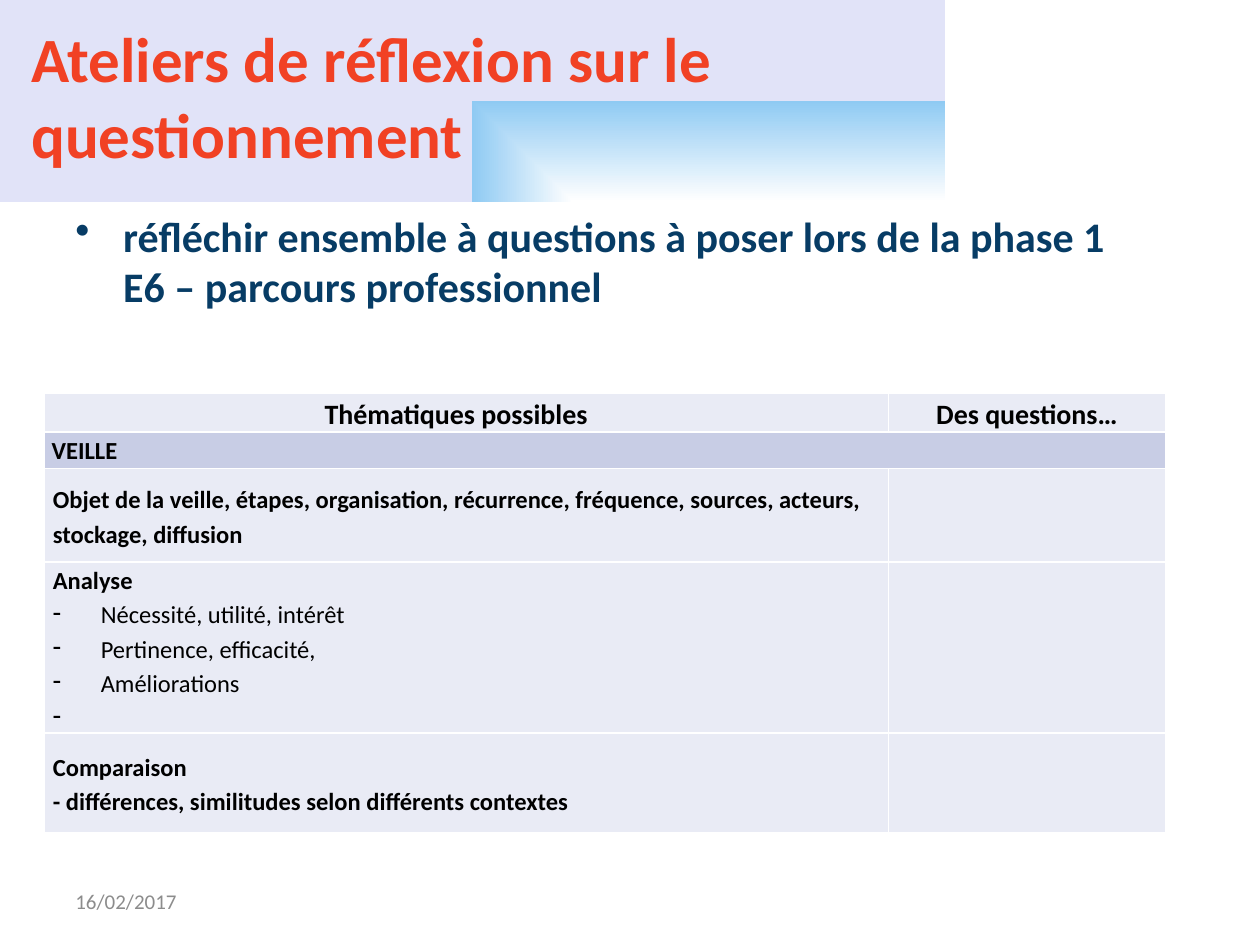
import pptx
import pptx.dml.color
import pptx.enum.shapes
import pptx.enum.text
import pptx.oxml
import pptx.oxml.ns
import pptx.util
from dataclasses import dataclass

Inches = pptx.util.Inches
Pt = pptx.util.Pt
Align = pptx.enum.text.PP_ALIGN
Anchor = pptx.enum.text.MSO_ANCHOR
NS = pptx.oxml.ns.nsdecls("a")


@dataclass(frozen=True)
class Theme:
    face: str = "Calibri"
    title: str = "F14124"
    lead: str = "073C65"
    date: str = "8C8C8C"
    ink: str = "000000"
    line: str = "FFFFFF"
    cell: str = "E9EBF5"
    band: str = "C8CDE5"
    # Banner gradient: position in percent, colour
    stops: tuple = ((0, "FFFFFF"), (100, "8FCAF3"), (100, "C1C7F2"), (100, "E1E3F8"))
    big: int = 36
    mid: int = 24
    head: int = 16
    body: int = 14
    small: int = 12


def rgb(code):
    return pptx.dml.color.RGBColor.from_string(code)


class Deck:
    def __init__(self, theme, wide, high):
        self.theme = theme
        self.file = pptx.Presentation()
        self.file.slide_width = Inches(wide)
        self.file.slide_height = Inches(high)
        self.slide = self.file.slides.add_slide(self.file.slide_layouts[6])

    def banner(self, *box):
        """Rectangle with a gradient that starts at its lower right corner."""
        shape = self.slide.shapes.add_shape(
            pptx.enum.shapes.MSO_SHAPE.RECTANGLE, *map(Inches, box))
        shape.shadow.inherit = False
        shape.line.fill.background()
        stops = "".join(
            f'<a:gs pos="{pos * 1000}"><a:srgbClr val="{code}"/></a:gs>'
            for pos, code in self.theme.stops)
        fill = pptx.oxml.parse_xml(
            f'<a:gradFill {NS} rotWithShape="1"><a:gsLst>{stops}</a:gsLst>'
            '<a:path path="rect"><a:fillToRect l="100000" t="100000"/></a:path>'
            '</a:gradFill>')
        shape._element.spPr.find(pptx.oxml.ns.qn("a:prstGeom")).addnext(fill)

    def style(self, para, text, size, color, bold=True, bullet=None):
        para.text = text
        if bullet:
            props = para._p.get_or_add_pPr()
            props.set("marL", str(Inches(0.38)))
            props.set("indent", str(-Inches(0.38)))
            props.append(pptx.oxml.parse_xml(f'<a:buChar {NS} char="{bullet}"/>'))
        font = para.font
        font.name, font.size, font.bold = self.theme.face, Pt(size), bold
        font.color.rgb = rgb(color)

    def text(self, box, text, size, color, anchor=Anchor.MIDDLE, **looks):
        frame = self.slide.shapes.add_textbox(*map(Inches, box)).text_frame
        frame.word_wrap = True
        frame.vertical_anchor = anchor
        self.style(frame.paragraphs[0], text, size, color, **looks)

    def table(self, left, top, cols, rows):
        frame = self.slide.shapes.add_table(
            len(rows), len(cols), Inches(left), Inches(top),
            Inches(sum(cols)), Inches(sum(rows)))
        grid = frame.table
        for col, wide in zip(grid.columns, cols):
            col.width = Inches(wide)
        for row, high in zip(grid.rows, rows):
            row.height = Inches(high)
        for cell in grid.iter_cells():
            self.paint(cell, self.theme.cell)
        return grid

    def paint(self, cell, color):
        cell.fill.solid()
        cell.fill.fore_color.rgb = rgb(color)
        props = cell._tc.get_or_add_tcPr()
        for spot, side in enumerate("LRTB"):
            props.insert(spot, pptx.oxml.parse_xml(
                f'<a:ln{side} {NS} w="{Pt(1)}"><a:solidFill>'
                f'<a:srgbClr val="{self.theme.line}"/></a:solidFill></a:ln{side}>'))

    def fill(self, cell, lines, size, pad=0.07, right=None,
             align=Align.LEFT, anchor=Anchor.MIDDLE):
        """Each line is (text, bold, bullet)."""
        cell.margin_left = Inches(pad)
        cell.margin_right = Inches(right or pad)
        cell.margin_top = cell.margin_bottom = 0
        cell.vertical_anchor = anchor
        frame = cell.text_frame
        for num, (text, bold, bullet) in enumerate(lines):
            para = frame.add_paragraph() if num else frame.paragraphs[0]
            self.style(para, text, size, self.theme.ink, bold, bullet)
            para.alignment = align
            para.line_spacing = 1.15


def main():
    theme = Theme()
    deck = Deck(theme, 10, 7.5)

    # Banner, title, lead and date
    deck.banner(0, 0, 7.5, 1.6)
    deck.text((0.5, 1.62, 9, 1.2),
              "réfléchir ensemble à questions à poser lors de la phase 1\v"
              "E6 – parcours professionnel",
              theme.mid, theme.lead, Anchor.TOP, bullet="•")
    deck.text((0.15, 0.13, 7.02, 1.25), "Ateliers de réflexion sur le questionnement",
              theme.big, theme.title)
    deck.text((0.5, 6.95, 2.33, 0.4), "16/02/2017", theme.small, theme.date, bold=False)

    # Table of themes
    grid = deck.table(0.35, 3.12, (6.7, 2.2), (0.31, 0.29, 0.74, 1.36, 0.79))
    heads = (("Thématiques possibles", 0.22), ("Des questions…", 0.06))
    for col, (text, right) in enumerate(heads):
        deck.fill(grid.cell(0, col), [(text, True, None)], theme.head,
                  0.06, right, Align.CENTER, Anchor.TOP)

    # Section row across both columns
    band = grid.cell(1, 0)
    band.merge(grid.cell(1, 1))
    band.fill.fore_color.rgb = rgb(theme.band)
    deck.fill(band, [("VEILLE", True, None)], theme.body, 0.06, anchor=Anchor.TOP)

    # Topics
    points = ("Nécessité, utilité, intérêt", "Pertinence, efficacité,",
              "Améliorations", " ")
    topics = (
        [("Objet de la veille, étapes, organisation, récurrence, fréquence, "
          "sources, acteurs, stockage, diffusion", True, None)],
        [("Analyse", True, None)] + [(text, False, "-") for text in points],
        [("Comparaison", True, None),
         ("- différences, similitudes selon différents contextes", True, None)],
    )
    for row, lines in enumerate(topics, 2):
        deck.fill(grid.cell(row, 0), lines, theme.body)

    deck.file.save("out.pptx")


if __name__ == "__main__":
    main()
